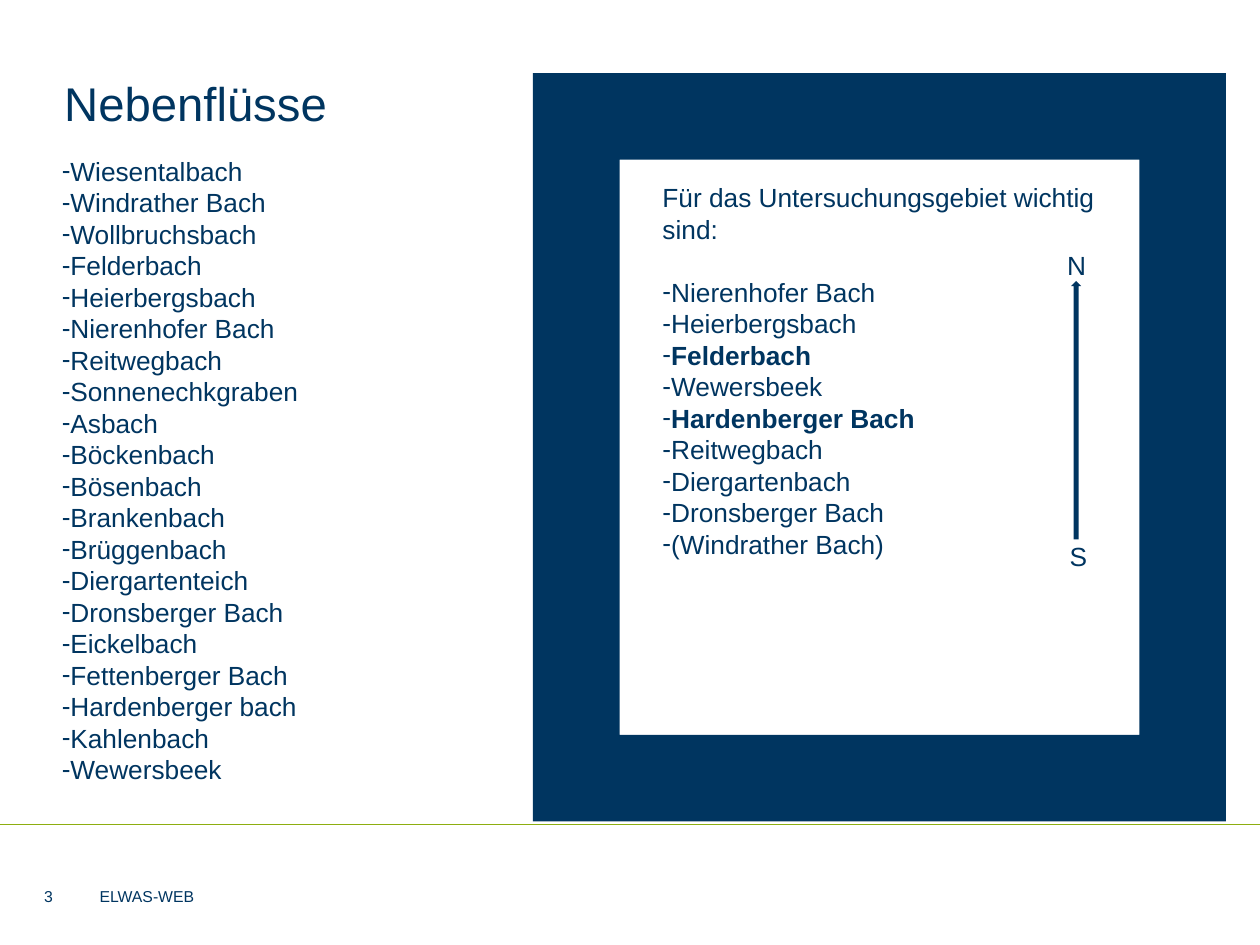
from dataclasses import dataclass

from lxml import etree
from pptx import Presentation
from pptx import util as u
from pptx.dml.color import RGBColor
from pptx.enum import shapes, text
from pptx.oxml.ns import qn


@dataclass(frozen=True)
class Theme:
    navy: RGBColor = RGBColor(0x00, 0x35, 0x60)
    green: RGBColor = RGBColor(0x8D, 0xAE, 0x10)
    font: str = "Arial"
    title: float = 27
    body: float = 15
    footer: float = 9
    title_pitch: float = 33
    body_pitch: float = 18
    hanging: float = 22.5


@dataclass(frozen=True)
class Box:
    left: float
    top: float
    width: float
    height: float

    def lengths(self) -> tuple:
        return tuple(u.Pt(n) for n in (self.left, self.top, self.width, self.height))


@dataclass(frozen=True)
class Item:
    words: str
    bold: bool = False
    bullet: bool = True
    before: float = 0


@dataclass(frozen=True)
class Label:
    words: str
    box: Box


THEME = Theme()

TRIBUTARIES = [Item(name) for name in (
    "Wiesentalbach", "Windrather Bach", "Wollbruchsbach", "Felderbach",
    "Heierbergsbach", "Nierenhofer Bach", "Reitwegbach", "Sonnenechkgraben",
    "Asbach", "Böckenbach", "Bösenbach", "Brankenbach", "Brüggenbach",
    "Diergartenteich", "Dronsberger Bach", "Eickelbach", "Fettenberger Bach",
    "Hardenberger bach", "Kahlenbach", "Wewersbeek",
)]
STUDY_AREA = [
    Item("Für das Untersuchungsgebiet wichtig sind:", bullet=False),
    Item("Nierenhofer Bach", before=THEME.body_pitch),
    Item("Heierbergsbach"),
    Item("Felderbach", bold=True),
    Item("Wewersbeek"),
    Item("Hardenberger Bach", bold=True),
    Item("Reitwegbach"),
    Item("Diergartenbach"),
    Item("Dronsberger Bach"),
    Item("(Windrather Bach)"),
]
COMPASS = [
    Label("N", Box(602.64, 138.96, 22.32, 25.2)),
    Label("S", Box(604.08, 305.28, 33.84, 25.2)),
]
FOOTER = [
    Label("ELWAS-WEB", Box(56.88, 506.16, 496.08, 11.52)),
    Label("3", Box(25.2, 506.16, 20.16, 11.52)),
]


def place(shape, box: Box) -> None:
    shape.left, shape.top, shape.width, shape.height = box.lengths()


def add_bullet(paragraph) -> None:
    properties = paragraph._p.get_or_add_pPr()
    properties.set("marL", "0")
    properties.set("indent", str(-u.Pt(THEME.hanging)))
    etree.SubElement(properties, qn("a:buFont"), typeface=THEME.font)
    etree.SubElement(properties, qn("a:buChar"), char="-")


def write(shape, items: list[Item], size: float, pitch: float | None = None,
          inset: bool = True, anchor=text.MSO_ANCHOR.TOP) -> None:
    """Fill a shape's text frame with one paragraph per item."""
    frame = shape.text_frame
    frame.word_wrap = True
    frame.auto_size = text.MSO_AUTO_SIZE.NONE
    frame.vertical_anchor = anchor
    frame.margin_left = frame.margin_right = u.Pt(7.2 if inset else 0)
    frame.margin_top = frame.margin_bottom = u.Pt(3.6 if inset else 0)
    for index, item in enumerate(items):
        paragraph = frame.add_paragraph() if index else frame.paragraphs[0]
        paragraph.alignment = text.PP_ALIGN.LEFT
        paragraph.space_before = u.Pt(item.before)
        if pitch:
            paragraph.line_spacing = u.Pt(pitch)
        if item.bullet:
            add_bullet(paragraph)
        run = paragraph.add_run()
        run.text = item.words
        run.font.name = THEME.font
        run.font.size = u.Pt(size)
        run.font.bold = item.bold
        run.font.color.rgb = THEME.navy


def add_solid(slide, kind, box: Box):
    shape = slide.shapes.add_shape(kind, *box.lengths())
    shape.shadow.inherit = False
    shape.fill.solid()
    shape.fill.fore_color.rgb = THEME.navy
    shape.line.fill.background()
    return shape


def add_rule(slide, top: float, width: float) -> None:
    rule = slide.shapes.add_connector(
        shapes.MSO_CONNECTOR.STRAIGHT, u.Pt(0), u.Pt(top), u.Pt(width), u.Pt(top))
    rule.line.color.rgb = THEME.green
    rule.line.width = u.Pt(0.5)
    etree.SubElement(rule._element.spPr, qn("a:effectLst"))


def main() -> None:
    presentation = Presentation()
    presentation.slide_width, presentation.slide_height = u.Pt(720), u.Pt(540)
    slide = presentation.slides.add_slide(presentation.slide_layouts[1])

    # Footer rule and texts
    add_rule(slide, 470.88, 720)
    for label in FOOTER:
        write(slide.shapes.add_textbox(*label.box.lengths()),
              [Item(label.words, bullet=False)], THEME.footer,
              inset=False, anchor=text.MSO_ANCHOR.MIDDLE)

    # Title and list of all tributaries
    title, body = slide.placeholders
    place(title, Box(36.72, 41.76, 595.44, 48.96))
    write(title, [Item("Nebenflüsse", bullet=False)], THEME.title,
          THEME.title_pitch, inset=False)
    place(body, Box(28.08, 84.96, 289.44, 370.8))
    write(body, TRIBUTARIES, THEME.body, THEME.body_pitch)

    # Framed list for the study area
    add_solid(slide, shapes.MSO_SHAPE.FRAME, Box(304.56, 41.76, 396, 427.68))
    study_area = slide.shapes.add_textbox(*Box(371.52, 100.08, 266.4, 243.36).lengths())
    write(study_area, STUDY_AREA, THEME.body, THEME.body_pitch)

    # North-south arrow
    arrow = add_solid(slide, shapes.MSO_SHAPE.DOWN_ARROW, Box(612, 160.56, 5.76, 147.6))
    arrow.rotation = 180
    for label in COMPASS:
        write(slide.shapes.add_textbox(*label.box.lengths()),
              [Item(label.words, bullet=False)], THEME.body, THEME.body_pitch)

    presentation.save("out.pptx")


if __name__ == "__main__":
    main()
